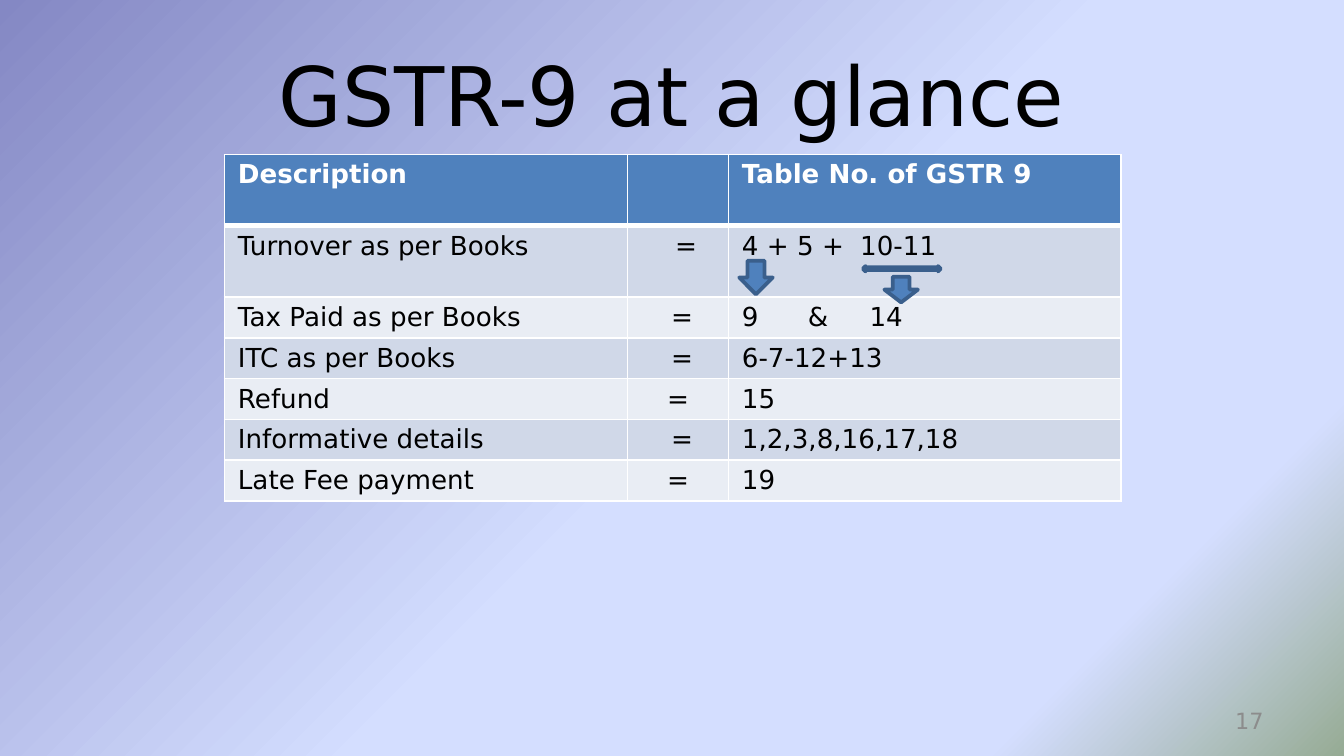
from lxml.etree import SubElement
from pptx import Presentation
from pptx.dml.color import RGBColor
from pptx.enum.shapes import MSO_SHAPE
from pptx.enum.text import MSO_ANCHOR, PP_ALIGN
from pptx.oxml.ns import qn
from pptx.util import Inches, Pt

FONT = "DejaVu Sans"
BLUE, DARK_BLUE, WHITE, BLACK, GREY = "4F81BD", "3A5F8C", "FFFFFF", "000000", "8C8C8C"
BANDS = ("D0D8E8", "E9EDF4")
STOPS = [(0, "8488C4"), (53, "D4DEFF"), (83, "D4DEFF"), (100, "96AB94")]
COLUMNS = [3, 0.75, 2.92]
ROW_HEIGHTS = [0.53, 0.53] + [0.3] * 5
SPACE = 0.06
HEADER = ["Description", "", "Table No. of GSTR 9"]
ROWS = [
    ("Turnover as per Books", 2, "4 + 5 +\t10-11", [0.88]),
    ("Tax Paid as per Books", 1, "9\t&\t14", [0.49, 0.95]),
    ("ITC as per Books", 1, "6-7-12+13", []),
    ("Refund", 0, "15", []),
    ("Informative details", 1, "1,2,3,8,16,17,18", []),
    ("Late Fee payment", 0, "19", []),
]


def rgb(color):
    return RGBColor.from_string(color)


def write(tf, text, size=14, color=BLACK, bold=False, align=PP_ALIGN.LEFT, tabs=()):
    p = tf.paragraphs[0]
    p.alignment = align
    if tabs:
        tab_list = SubElement(p._p.get_or_add_pPr(), qn("a:tabLst"))
        for pos in tabs:
            SubElement(tab_list, qn("a:tab"), pos=str(Inches(pos)), algn="l")
    r = p.add_run()
    r.text = text
    r.font.name = FONT
    r.font.size = Pt(size)
    r.font.bold = bold
    r.font.color.rgb = rgb(color)


def add_background(s):
    fill = s.background.fill
    fill.gradient()
    fill.gradient_angle = 315
    stops = s._element.find(".//" + qn("a:gsLst"))
    for gs in list(stops):
        stops.remove(gs)
    for pos, color in STOPS:
        gs = SubElement(stops, qn("a:gs"), pos=str(pos * 1000))
        SubElement(gs, qn("a:srgbClr"), val=color)


def add_title(s, x, y, w, h):
    sp = s.shapes.title
    sp.left, sp.top, sp.width, sp.height = map(Inches, (x, y, w, h))
    sp.text_frame.vertical_anchor = MSO_ANCHOR.MIDDLE
    write(sp.text_frame, "GSTR-9 at a glance", size=44, align=PP_ALIGN.CENTER)


def format_cell(cell, fill, bottom=1, shift=0):
    cell.margin_left, cell.margin_right = Inches(0.1 + shift), Inches(0.1)
    cell.margin_top = cell.margin_bottom = Pt(2.7)
    tc_pr = cell._tc.get_or_add_tcPr()
    for side, width in (("L", 1), ("R", 1), ("T", 1), ("B", bottom)):
        ln = SubElement(tc_pr, qn("a:ln" + side), w=str(Pt(width)))
        SubElement(SubElement(ln, qn("a:solidFill")), qn("a:srgbClr"), val=WHITE)
    cell.fill.solid()
    cell.fill.fore_color.rgb = rgb(fill)


def add_summary_table(s, x, y, w, h):
    table = s.shapes.add_table(len(ROWS) + 1, len(COLUMNS), *map(Inches, (x, y, w, h))).table
    for column, width in zip(table.columns, COLUMNS):
        column.width = Inches(width)
    for row, height in zip(table.rows, ROW_HEIGHTS):
        row.height = Inches(height)
    for i, text in enumerate(HEADER):
        cell = table.cell(0, i)
        format_cell(cell, BLUE, bottom=3)
        if text:
            write(cell.text_frame, text, color=WHITE, bold=True)
    for i, (description, spaces, numbers, tabs) in enumerate(ROWS):
        cells = [table.cell(i + 1, j) for j in range(3)]
        for cell, shift in zip(cells, (0, spaces * SPACE, 0)):
            format_cell(cell, BANDS[i % 2], shift=shift)
        write(cells[0].text_frame, description)
        write(cells[1].text_frame, "=", align=PP_ALIGN.CENTER)
        write(cells[2].text_frame, numbers, tabs=tabs)


def add_arrow(s, kind, x, y, w, h):
    sp = s.shapes.add_shape(kind, *map(Inches, (x, y, w, h)))
    sp.shadow.inherit = False
    sp.fill.solid()
    sp.fill.fore_color.rgb = rgb(BLUE)
    sp.line.color.rgb = rgb(DARK_BLUE)
    sp.line.width = Pt(2)


def add_turnover_arrows(s, x, y):
    add_arrow(s, MSO_SHAPE.DOWN_ARROW, x, y, 0.25, 0.25)
    add_arrow(s, MSO_SHAPE.DOWN_ARROW, x + 1.08, y + 0.12, 0.25, 0.19)
    add_arrow(s, MSO_SHAPE.LEFT_RIGHT_ARROW, x + 0.92, y + 0.04, 0.58, 0.04)


def add_page_number(s, x, y, w, h):
    tf = s.shapes.add_textbox(*map(Inches, (x, y, w, h))).text_frame
    tf.word_wrap = True
    tf.vertical_anchor = MSO_ANCHOR.MIDDLE
    write(tf, "17", size=12, color=GREY, align=PP_ALIGN.RIGHT)


def main():
    prs = Presentation()
    prs.slide_width = Inches(10)
    prs.slide_height = prs.slide_width * 9 // 16
    s = prs.slides.add_slide(prs.slide_layouts[5])
    add_background(s)
    add_title(s, 0.5, 0.23, 9, 0.94)
    add_summary_table(s, 1.67, 1.15, sum(COLUMNS), sum(ROW_HEIGHTS))
    add_turnover_arrows(s, 5.5, 1.94)
    add_page_number(s, 7.17, 5.21, 2.33, 0.3)
    prs.save("out.pptx")


if __name__ == "__main__":
    main()
